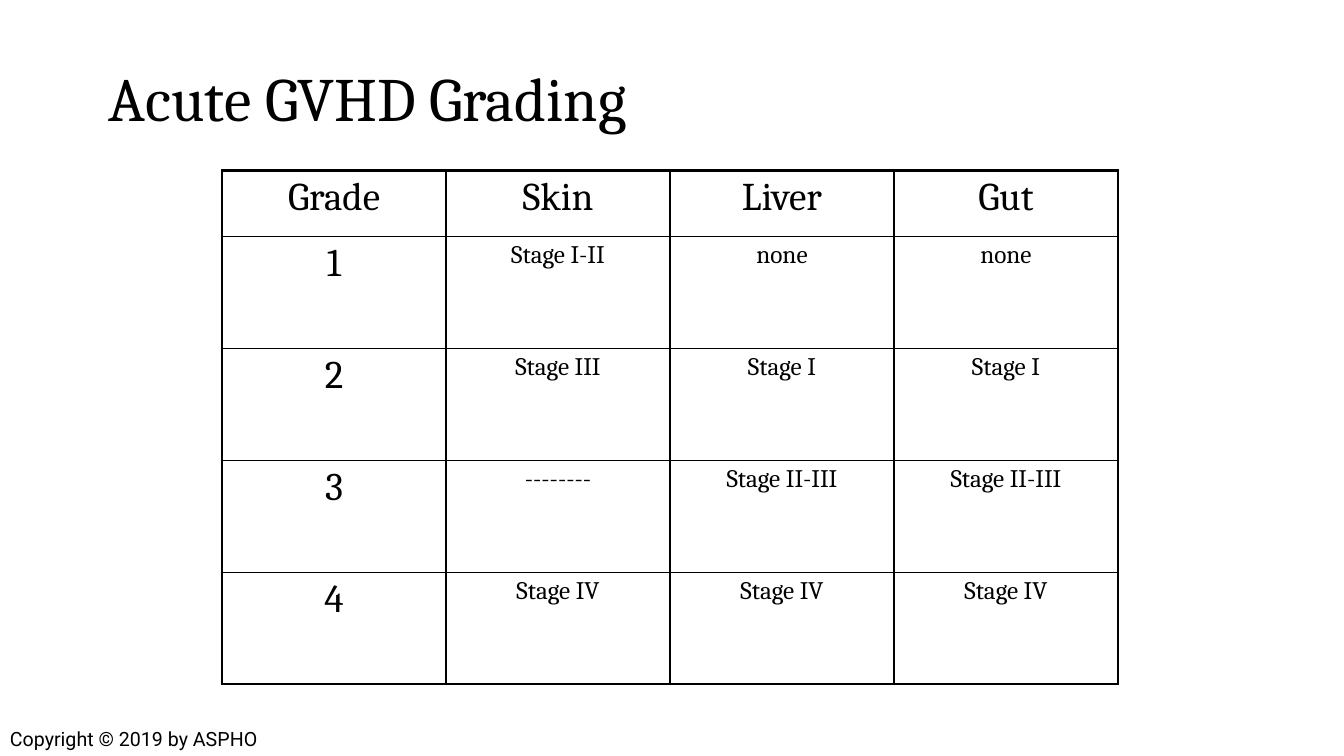
from typing import Any, NamedTuple

import lxml.etree
import pptx
import pptx.dml.color
import pptx.enum.text
import pptx.oxml.ns
import pptx.util

Pt = pptx.util.Pt
BLACK = pptx.dml.color.RGBColor(0, 0, 0)
ALIGN = pptx.enum.text.PP_ALIGN
ANCHOR = pptx.enum.text.MSO_ANCHOR

HEADINGS = ("Grade", "Skin", "Liver", "Gut")
COLUMN_WIDTH = 160
HEADING_HEIGHT, GRADE_HEIGHT = 47, 80
OUTER_LINE, INNER_LINE = 2.25, 1
CELL_FORMAT = {
    "margin_left": Pt(9.6),
    "margin_right": Pt(9.6),
    "margin_top": Pt(3.6),
    "margin_bottom": Pt(3.6),
    "vertical_anchor": ANCHOR.TOP,
}


class Grade(NamedTuple):
    grade: str
    skin: str
    liver: str
    gut: str


GRADES = (
    Grade("1", "Stage I-II", "none", "none"),
    Grade("2", "Stage III", "Stage I", "Stage I"),
    Grade("3", "--------", "Stage II-III", "Stage II-III"),
    Grade("4", "Stage IV", "Stage IV", "Stage IV"),
)


def apply_format(target: Any, values: dict[str, Any]) -> None:
    for name, value in values.items():
        setattr(target, name, value)


def write_text(frame: Any, text: str, size: float, font: str, alignment: Any) -> None:
    frame.text = text
    paragraph = frame.paragraphs[0]
    apply_format(paragraph, {"alignment": alignment, "space_before": Pt(0)})
    run_font = paragraph.runs[0].font
    apply_format(run_font, {"name": font, "size": Pt(size), "bold": False})
    run_font.color.rgb = BLACK


def draw_borders(cell: Any, widths: dict[str, float]) -> None:
    properties = cell._tc.get_or_add_tcPr()
    qn = pptx.oxml.ns.qn
    for position, (side, width) in enumerate(widths.items()):
        line = lxml.etree.Element(qn(f"a:ln{side}"), w=str(Pt(width)))
        fill = lxml.etree.SubElement(line, qn("a:solidFill"))
        lxml.etree.SubElement(fill, qn("a:srgbClr"), val=str(BLACK))
        properties.insert(position, line)


def add_title(slide: Any) -> None:
    title = slide.shapes.title
    apply_format(title, {"left": Pt(70.6), "top": Pt(27.4), "width": Pt(815.8), "height": Pt(90)})
    title.text_frame.vertical_anchor = ANCHOR.MIDDLE
    write_text(title.text_frame, "Acute GVHD Grading", 44, "Cambria", ALIGN.LEFT)
    title.text_frame.paragraphs[0].line_spacing = 0.9


def add_grading_table(slide: Any) -> None:
    rows = (HEADINGS, *GRADES)
    last_row, last_column = len(rows) - 1, len(HEADINGS) - 1
    table = slide.shapes.add_table(
        len(rows), len(HEADINGS), Pt(158.6), Pt(121.7),
        Pt(COLUMN_WIDTH * len(HEADINGS)), Pt(HEADING_HEIGHT + GRADE_HEIGHT * len(GRADES)),
    ).table
    apply_format(table, {"first_row": False, "horz_banding": False})
    for column in table.columns:
        column.width = Pt(COLUMN_WIDTH)
    for r, row in enumerate(rows):
        table.rows[r].height = Pt(GRADE_HEIGHT if r else HEADING_HEIGHT)
        for c, text in enumerate(row):
            cell = table.cell(r, c)
            apply_format(cell, CELL_FORMAT)
            write_text(cell.text_frame, text, 18 if r and c else 28, "Cambria", ALIGN.CENTER)
            cell.fill.background()
            outer_sides = {"L": c == 0, "R": c == last_column, "T": r == 0, "B": r == last_row}
            draw_borders(cell, {
                side: OUTER_LINE if outer else INNER_LINE
                for side, outer in outer_sides.items()
            })


def add_copyright(slide: Any) -> None:
    notice = slide.shapes.add_textbox(Pt(0), Pt(515.5), Pt(244.8), Pt(24.5))
    notice.text_frame.word_wrap = True
    write_text(notice.text_frame, "Copyright © 2019 by ASPHO", 14, "Roboto", ALIGN.LEFT)


def main() -> None:
    deck = pptx.Presentation()
    apply_format(deck, {"slide_width": Pt(960), "slide_height": Pt(540)})
    slide = deck.slides.add_slide(deck.slide_layouts.get_by_name("Title Only"))
    add_title(slide)
    add_grading_table(slide)
    add_copyright(slide)
    deck.save("out.pptx")


if __name__ == "__main__":
    main()
